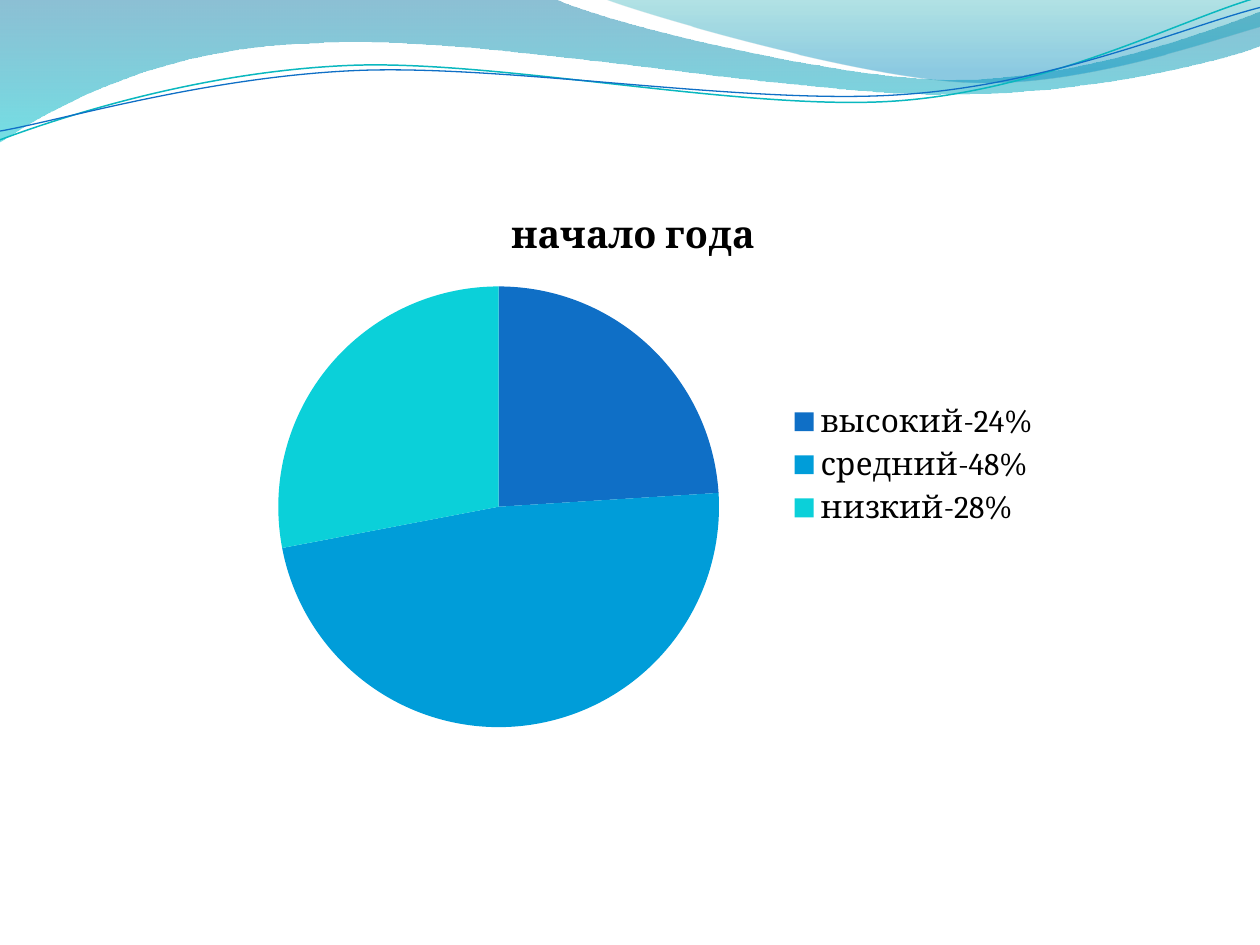
from math import cos, radians, sin

from lxml.etree import SubElement
from pptx import Presentation
from pptx.chart.data import CategoryChartData
from pptx.dml.color import RGBColor
from pptx.enum.chart import XL_CHART_TYPE as ChartType, XL_LEGEND_POSITION as LegendPos
from pptx.oxml.ns import qn
from pptx.util import Pt

FONT = "Cambria"
BLACK = RGBColor(0x00, 0x00, 0x00)
BLUE = RGBColor(0x0F, 0x6F, 0xC6)
SKY = RGBColor(0x00, 0x9D, 0xD9)
TURQUOISE = RGBColor(0x0B, 0xD0, 0xD9)
TEAL = RGBColor(0x0A, 0xB8, 0xBF)
BAND_TOP = RGBColor(0x00, 0x74, 0xA1)
BAND_END = RGBColor(0x00, 0xC6, 0xCF)
VEIL_TOP = RGBColor(0x00, 0xA1, 0xA9)
VEIL_END = RGBColor(0x00, 0x8B, 0xBF)

# Outlines in points: a pair is a straight step, six numbers are a Bezier curve
BAND = [(0, 0), (316.8, -0.7),
        (342.7, 12.2, 478.1, 45.4, 545.8, 45.4), (614.2, 45.4, 689.8, 18.7, 720, 6.5),
        (720.7, 25.9),
        (707.8, 31.7, 626.4, 54.7, 537.1, 54), (447.8, 54, 275, 20.2, 185, 24.5),
        (92.9, 25.9, 33.1, 59.8, -0.7, 81.4), (0, 0)]
VEIL = [(344.9, -0.7),
        (366.5, 7.9, 491, 44.6, 553.7, 46.8), (616.3, 49.7, 691.9, 23, 720, 15.1),
        (720, 0), (344.9, -0.7)]
TEAL_WAVE = [(0, 79.9), (34.6, 67, 113.8, 41, 199.4, 37.4),
             (284.4, 33.8, 427, 64.1, 513.4, 57.6), (599.8, 51.1, 675.4, 10.8, 718.6, -1.4)]
BLUE_WAVE = [(0, 74.9), (33.8, 69.1, 118.1, 43.9, 203.8, 40.3),
             (290.2, 36.7, 429.8, 60.5, 516.2, 54), (601.9, 48.2, 677.5, 15.1, 720, 4.3)]
WAVE_TILT = -2.7


def turn(outline, center, degrees):
    """Turn every point of an outline clockwise about a center."""
    c, s = cos(radians(degrees)), sin(radians(degrees))
    cx, cy = center
    turned = []
    for step in outline:
        offsets = [(x - cx, y - cy) for x, y in zip(step[::2], step[1::2])]
        turned.append(tuple(v for x, y in offsets
                            for v in (cx + x * c - y * s, cy + x * s + y * c)))
    return turned


def add_outline(slide, outline, close):
    """Add a freeform whose six-number steps become true Bezier curves."""
    points = [(Pt(x), Pt(y)) for step in outline for x, y in zip(step[::2], step[1::2])]
    builder = slide.shapes.build_freeform(*points[0])
    builder.add_line_segments(points[1:], close=close)
    sp = builder.convert_to_shape()
    sp.shadow.inherit = False

    # Merge the three straight steps of each curve into one
    lines = iter(list(sp.element.spPr.iter(qn("a:lnTo"))))
    for step in outline[1:]:
        curve = next(lines)
        if len(step) == 6:
            curve.tag = qn("a:cubicBezTo")
            for _ in range(2):
                line = next(lines)
                curve.append(line[0])
                line.getparent().remove(line)
    return sp


def add_gradient_area(slide, outline, stops):
    """Add a filled area; each stop is (position, colour, opacity in percent)."""
    sp = add_outline(slide, outline, close=True)
    sp.line.fill.background()
    sp.fill.gradient()
    sp.fill.gradient_angle = 270
    for stop, (position, color, _) in zip(sp.fill.gradient_stops, stops):
        stop.position = position
        stop.color.rgb = color
    for clr, (_, _, opacity) in zip(sp.element.spPr.iter(qn("a:srgbClr")), stops):
        SubElement(clr, qn("a:alpha"), val=str(opacity * 1000))


def add_wave(slide, outline, center, color, width):
    sp = add_outline(slide, turn(outline, center, -WAVE_TILT), close=False)
    sp.rotation = WAVE_TILT
    sp.fill.background()
    sp.line.color.rgb = color
    sp.line.width = Pt(width)


def format_font(font, size, bold=False):
    font.name, font.size, font.bold = FONT, Pt(size), bold
    font.color.rgb = BLACK


def add_pie(slide, title, slices):
    data = CategoryChartData()
    data.categories = [name for name, _, _ in slices]
    data.add_series(title, [value for _, value, _ in slices])
    chart = slide.shapes.add_chart(ChartType.PIE, Pt(121.7), Pt(105.8),
                                   Pt(480.2), Pt(319.7), data).chart
    format_font(chart.font, 18)

    # Title and legend
    chart.has_title = True
    r = chart.chart_title.text_frame.paragraphs[0].add_run()
    r.text = title
    format_font(r.font, 21.6, bold=True)
    chart.has_legend = True
    chart.legend.position = LegendPos.RIGHT
    chart.legend.include_in_layout = False
    format_font(chart.legend.font, 18)

    # Slice colours
    plot = chart.plots[0]
    plot.vary_by_categories = True
    for i, (_, _, color) in enumerate(slices):
        fill = plot.series[0].points[i].format.fill
        fill.solid()
        fill.fore_color.rgb = color


def main():
    prs = Presentation()
    prs.slide_width, prs.slide_height = Pt(720), Pt(540)
    slide = prs.slides.add_slide(prs.slide_layouts[6])

    # Wavy header
    add_gradient_area(slide, BAND, [(0, BAND_TOP, 45), (1, BAND_END, 55)])
    add_gradient_area(slide, VEIL, [(0, VEIL_TOP, 30), (0.8, VEIL_END, 45)])
    add_wave(slide, TEAL_WAVE, (359.3, 41.4), TEAL, 0.85)
    add_wave(slide, BLUE_WAVE, (359.6, 42.5), BLUE, 0.75)

    # Levels at the start of the year
    add_pie(slide, "начало года", [("высокий-24%", 24, BLUE),
                                   ("средний-48%", 48, SKY),
                                   ("низкий-28%", 28, TURQUOISE)])
    prs.save("out.pptx")


if __name__ == "__main__":
    main()
